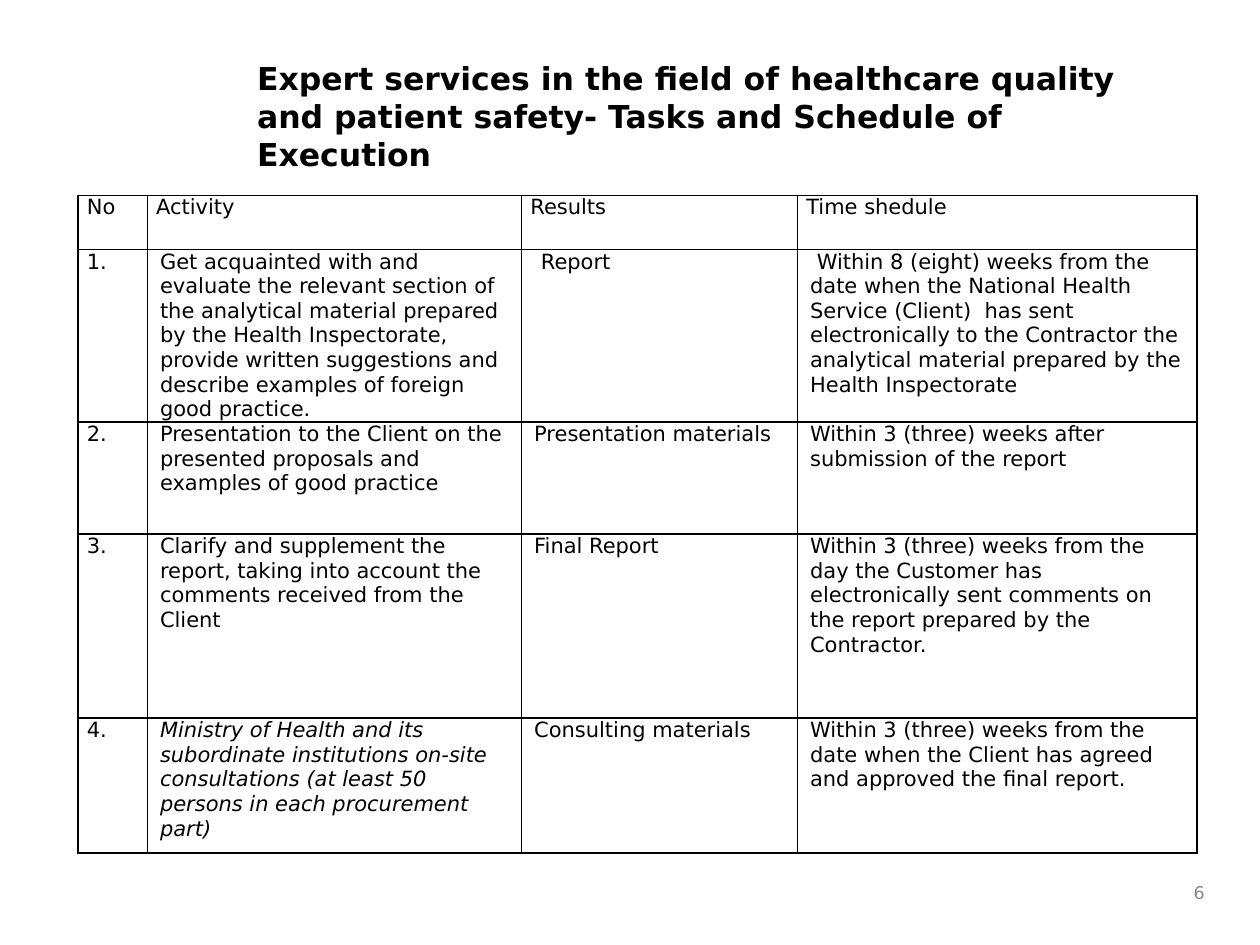
from typing import NamedTuple

from lxml.etree import SubElement
from pptx import Presentation
from pptx.dml.color import RGBColor
from pptx.enum.text import MSO_ANCHOR as Anchor, MSO_AUTO_SIZE as Fit, PP_ALIGN as Align
from pptx.oxml.ns import qn
from pptx.util import Inches, Pt

FONT = "DejaVu Sans"
BLACK = RGBColor(0x00, 0x00, 0x00)
GREY = RGBColor(0x89, 0x89, 0x89)
COLS = (0.55, 2.97, 2.19, 3.17)


class Task(NamedTuple):
    height: float
    action: str
    result: str
    time: str
    italic: bool = False


HEADS = ("No", "Activity", "Results", "Time shedule")
HEAD_HEIGHT = 0.43
TASKS = (
    Task(1.37,
         "Get acquainted with and evaluate the relevant section of the analytical "
         "material prepared by the Health Inspectorate, provide written suggestions "
         "and describe examples of foreign good practice.",
         " Report",
         " Within 8 (eight) weeks from the date when the National Health Service "
         "(Client)  has sent electronically to the Contractor the analytical material "
         "prepared by the Health Inspectorate"),
    Task(0.89,
         "Presentation to the Client on the presented proposals and examples of "
         "good practice",
         "Presentation materials",
         "Within 3 (three) weeks after submission of the report"),
    Task(1.46,
         "Clarify and supplement the report, taking into account the comments "
         "received from the Client",
         "Final Report",
         "Within 3 (three) weeks from the day the Customer has electronically sent "
         "comments on the report prepared by the Contractor."),
    Task(1.07,
         "Ministry of Health and its subordinate institutions on-site consultations "
         "(at least 50 persons in each procurement part)",
         "Consulting materials",
         "Within 3 (three) weeks from the date when the Client has agreed and "
         "approved the final report.",
         italic=True),
)


def style(frame, text: str, size: int, color: RGBColor, align: Align,
          bold: bool = False, italic: bool = False) -> None:
    frame.text = text
    para = frame.paragraphs[0]
    para.alignment = align
    font = para.runs[0].font
    font.name, font.size = FONT, Pt(size)
    font.bold, font.italic = bold, italic
    font.color.rgb = color


def add_borders(cell) -> None:
    props = cell._tc.get_or_add_tcPr()
    for side in ("lnL", "lnR", "lnT", "lnB"):
        line = SubElement(props, qn(f"a:{side}"), w=str(Pt(1)))
        fill = SubElement(line, qn("a:solidFill"))
        SubElement(fill, qn("a:srgbClr"), val=str(BLACK))


def fill_cell(cell, text: str, label: bool, italic: bool = False) -> None:
    """Labels are justified with a narrow margin; other cells are left aligned."""
    add_borders(cell)
    cell.fill.background()
    cell.margin_left = cell.margin_right = Inches(0.07 if label else 0.1)
    cell.margin_top = cell.margin_bottom = 0
    style(cell.text_frame, text, 12, BLACK,
          Align.JUSTIFY if label else Align.LEFT, italic=italic)


def add_tasks(slide) -> None:
    heights = (HEAD_HEIGHT, *(task.height for task in TASKS))
    table = slide.shapes.add_table(
        len(heights), len(COLS), Inches(0.62), Inches(1.55),
        Inches(sum(COLS)), Inches(sum(heights))).table
    table.first_row = table.horz_banding = False
    for col, width in zip(table.columns, COLS):
        col.width = Inches(width)
    for row, height in zip(table.rows, heights):
        row.height = Inches(height)

    for col, head in enumerate(HEADS):
        fill_cell(table.cell(0, col), head, label=True)
    for row, task in enumerate(TASKS, 1):
        fill_cell(table.cell(row, 0), f"{row}.", label=True)
        fill_cell(table.cell(row, 1), task.action, label=False, italic=task.italic)
        fill_cell(table.cell(row, 2), task.result, label=False)
        fill_cell(table.cell(row, 3), task.time, label=False)


def main() -> None:
    deck = Presentation()
    deck.slide_width, deck.slide_height = Inches(10), Inches(7.5)
    slide = deck.slides.add_slide(deck.slide_layouts[5])

    # Title
    title = slide.shapes.title
    title.left, title.top = Inches(1.94), Inches(0.42)
    title.width, title.height = Inches(7.56), Inches(1.13)
    frame = title.text_frame
    frame.auto_size = Fit.NONE
    frame.vertical_anchor = Anchor.TOP
    style(frame, "Expert services in the field of healthcare quality and patient "
          "safety- Tasks and Schedule of Execution", 18, BLACK, Align.LEFT, bold=True)

    # Schedule
    add_tasks(slide)

    # Page number
    page = slide.shapes.add_textbox(
        Inches(9.33), Inches(6.92), Inches(0.33), Inches(0.33)).text_frame
    page.word_wrap = True
    page.vertical_anchor = Anchor.MIDDLE
    style(page, "6", 10, GREY, Align.RIGHT)

    deck.save("out.pptx")


if __name__ == "__main__":
    main()
